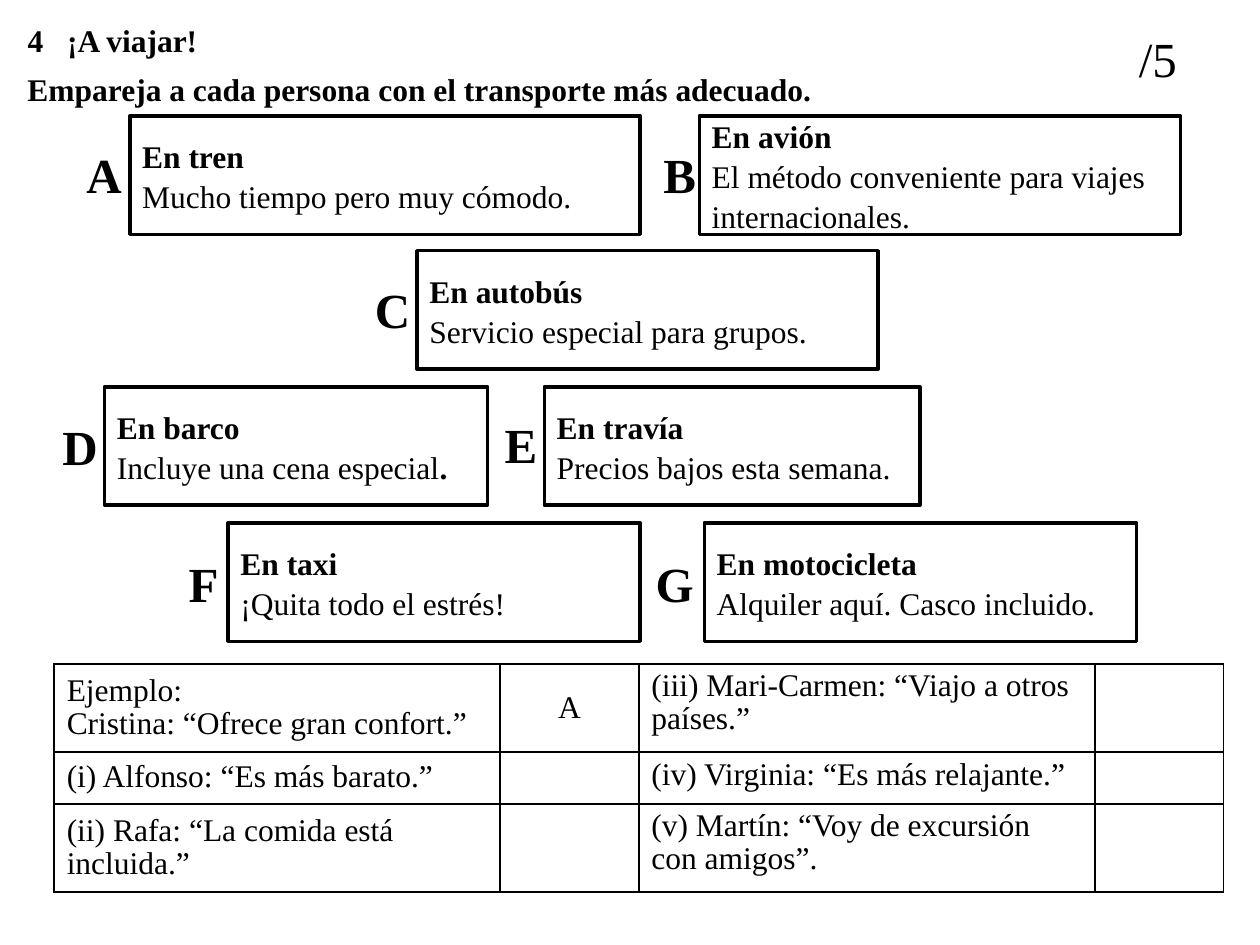
from lxml import etree
from pptx import Presentation
from pptx.dml.color import RGBColor
from pptx.enum.shapes import MSO_SHAPE as Shape
from pptx.enum.text import MSO_ANCHOR as Anchor, MSO_AUTO_SIZE as AutoSize, PP_ALIGN as Align
from pptx.oxml.ns import qn
from pptx.util import Inches, Pt

FONT = "Times New Roman"
BLACK = "000000"
CARD_HEIGHT = 0.94

# letter, left, top, width, label left, label top, heading, description, bold ending
CARDS = [
    ("A", 1.03, 0.92, 4.05, 0.39, 1.1, "En tren", "Mucho tiempo pero muy cómodo.", ""),
    ("B", 5.55, 0.92, 3.82, 4.96, 1.1, "En avión",
     "El método conveniente para viajes internacionales.", ""),
    ("C", 3.31, 1.99, 3.66, 2.68, 2.17, "En autobús", "Servicio especial para grupos.", ""),
    ("D", 0.83, 3.07, 3.04, 0.2, 3.26, "En barco", "Incluye una cena especial", "."),
    ("E", 4.32, 3.07, 2.98, 3.7, 3.24, "En travía", "Precios bajos esta semana.", ""),
    ("F", 1.81, 4.15, 3.27, 1.18, 4.34, "En taxi", "¡Quita todo el estrés!", ""),
    ("G", 5.59, 4.15, 3.43, 4.92, 4.34, "En motocicleta", "Alquiler aquí. Casco incluido.", ""),
]
COLUMN_WIDTHS = [3.54, 1.1, 3.62, 1.02]
ROW_HEIGHTS = [0.7, 0.41, 0.7]
ANSWERS = [
    ("Ejemplo:\vCristina: “Ofrece gran confort.”", "A",
     "(iii) Mari-Carmen: “Viajo a otros países.”", ""),
    ("(i) Alfonso: “Es más barato.”", "", "(iv) Virginia: “Es más relajante.”", ""),
    ("(ii) Rafa: “La comida está incluida.”", "", "(v) Martín: “Voy de excursión con amigos”.", ""),
]


def color(value):
    return RGBColor.from_string(value)


def format_paragraph(paragraph, size, bold=None, align=Align.LEFT, spacing=None):
    paragraph.alignment = align
    paragraph.line_spacing = spacing
    font = paragraph.font
    font.name, font.size, font.bold = FONT, Pt(size), bold
    font.color.rgb = color(BLACK)


def add_title(slide, text, left, top, width, height):
    title = slide.shapes.title
    title.left, title.top, title.width, title.height = map(Inches, (left, top, width, height))
    frame = title.text_frame
    frame.text = text
    frame.vertical_anchor = Anchor.TOP
    frame.auto_size = AutoSize.NONE
    format_paragraph(frame.paragraphs[0], 18, bold=True)


def add_text(slide, text, left, top, width, height, size, bold=False, align=Align.LEFT):
    box = slide.shapes.add_textbox(*map(Inches, (left, top, width, height)))
    frame = box.text_frame
    frame.word_wrap = True
    frame.text = text
    format_paragraph(frame.paragraphs[0], size, bold, align)


def add_card(slide, letter, left, top, width, label_left, label_top, heading, description, ending):
    card = slide.shapes.add_shape(
        Shape.RECTANGLE, *map(Inches, (left, top, width, CARD_HEIGHT)))
    card.shadow.inherit = False
    card.fill.background()
    card.line.color.rgb = color(BLACK)
    card.line.width = Pt(2)
    frame = card.text_frame
    frame.word_wrap = True
    frame.vertical_anchor = Anchor.MIDDLE
    paragraph = frame.paragraphs[0]
    format_paragraph(paragraph, 18, spacing=1.05)
    paragraph.add_run().text = heading
    paragraph.runs[0].font.bold = True
    paragraph.add_line_break()
    paragraph.add_run().text = description
    if ending:
        run = paragraph.add_run()
        run.text = ending
        run.font.bold = True
    add_text(slide, letter, label_left, label_top, 0.87, 0.57, 28, True, Align.CENTER)


def set_borders(cell, value, width):
    properties = cell._tc.get_or_add_tcPr()
    for index, side in enumerate(("a:lnL", "a:lnR", "a:lnT", "a:lnB")):
        line = etree.Element(qn(side), w=str(Pt(width)))
        fill = etree.SubElement(line, qn("a:solidFill"))
        etree.SubElement(fill, qn("a:srgbClr"), val=value)
        properties.insert(index, line)


def add_answer_table(slide, left, top):
    size = (sum(COLUMN_WIDTHS), sum(ROW_HEIGHTS))
    table = slide.shapes.add_table(
        len(ANSWERS), len(COLUMN_WIDTHS), *map(Inches, (left, top, *size))).table
    table.first_row = table.horz_banding = False
    for column, width in zip(table.columns, COLUMN_WIDTHS):
        column.width = Inches(width)
    for row, height, texts in zip(table.rows, ROW_HEIGHTS, ANSWERS):
        row.height = Inches(height)
        for index, (cell, text) in enumerate(zip(row.cells, texts)):
            cell.text = text
            cell.vertical_anchor = Anchor.MIDDLE if index < 2 else Anchor.TOP
            cell.fill.background()
            set_borders(cell, BLACK, 1)
            align = Align.CENTER if index % 2 else Align.LEFT
            format_paragraph(cell.text_frame.paragraphs[0], 18, False, align, 0.95)


def main():
    presentation = Presentation()
    presentation.slide_width, presentation.slide_height = Inches(10), Inches(7.5)
    slide = presentation.slides.add_slide(presentation.slide_layouts[5])
    add_title(slide, "4   ¡A viajar!", 0.12, 0.12, 4.02, 0.4)
    add_text(slide, "Empareja a cada persona con el transporte más adecuado.",
             0.12, 0.51, 6.77, 0.4, 18, bold=True)
    add_text(slide, "/5", 8.94, 0.18, 0.87, 0.57, 28)
    for card in CARDS:
        add_card(slide, *card)
    add_answer_table(slide, 0.43, 5.27)
    presentation.save("out.pptx")


if __name__ == "__main__":
    main()
